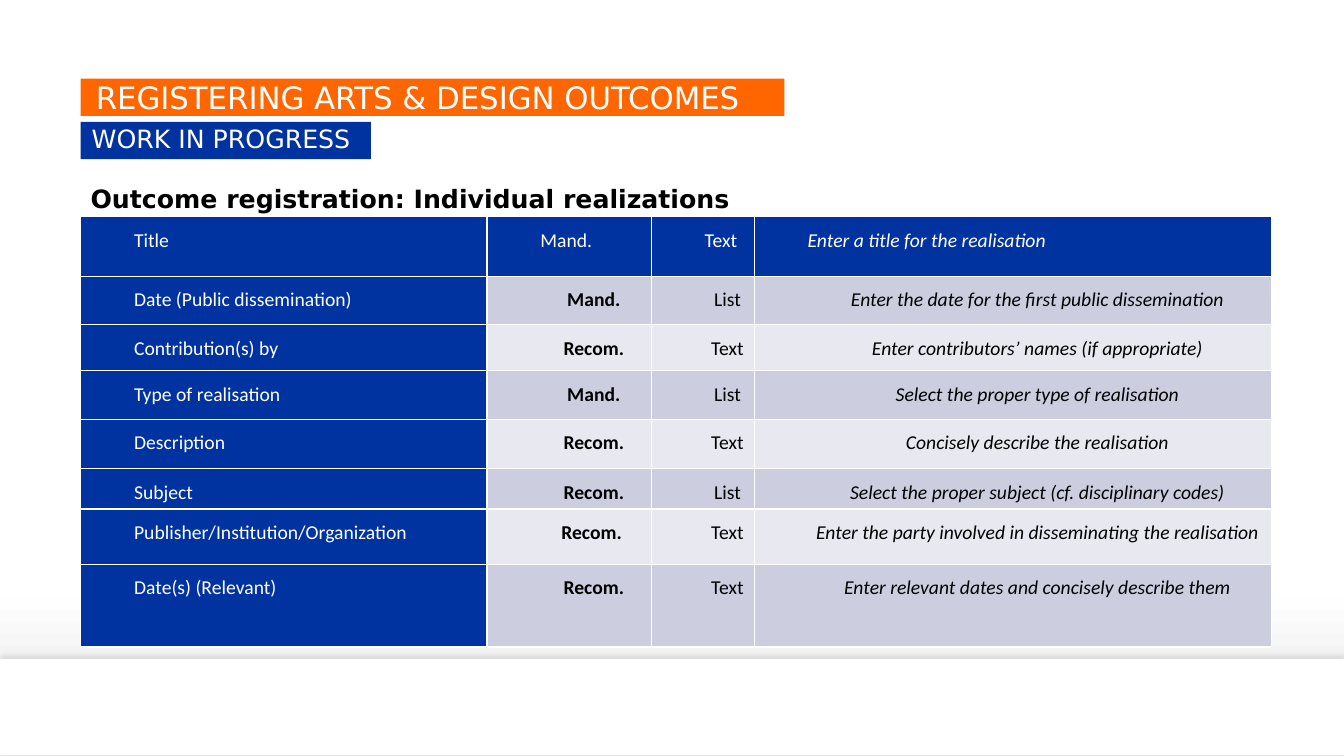
from copy import deepcopy

from lxml import etree
from pptx import Presentation
from pptx import util as u
from pptx.dml.color import RGBColor
from pptx.enum import shapes, text
from pptx.oxml.ns import nsdecls, qn

WHITE = RGBColor(0xFF, 0xFF, 0xFF)
BLACK = RGBColor(0, 0, 0)
ORANGE = RGBColor(0xFF, 0x66, 0x00)
BLUE = RGBColor(0x00, 0x33, 0x9F)
BANDS = [RGBColor(0xE7, 0xE8, 0xF0), RGBColor(0xCC, 0xCE, 0xDF)]
BACKGROUND = [(0, WHITE), (0.79, RGBColor(0xFE, 0xFE, 0xFE)),
              (0.92, RGBColor(0xED, 0xED, 0xED))]

TITLE = "REGISTERING ARTS & DESIGN OUTCOMES"
SUBTITLE = "WORK IN PROGRESS"
HEADING = "Outcome registration: Individual realizations"
FIELDS = [
    ("Title", "Mand.", "Text", "Enter a title for the realisation"),
    ("Date (Public dissemination)", "Mand.", "List",
     "Enter the date for the first public dissemination"),
    ("Contribution(s) by", "Recom.", "Text", "Enter contributors’ names (if appropriate)"),
    ("Type of realisation", "Mand.", "List", "Select the proper type of realisation"),
    ("Description", "Recom.", "Text", "Concisely describe the realisation"),
    ("Subject", "Recom.", "List", "Select the proper subject (cf. disciplinary codes)"),
    ("Publisher/Institution/Organization", "Recom. ", "Text",
     "Enter the party involved in disseminating the realisation"),
    ("Date(s) (Relevant)", "Recom.", "Text",
     "Enter relevant dates and concisely describe them"),
]
COLUMN_WIDTHS = [4.03, 1.63, 1.02, 5.13]
ROW_HEIGHTS = [0.59, 0.48, 0.46, 0.48, 0.49, 0.4, 0.55, 0.82]
LEFT = 0.8

SHADOW = (f'<a:effectLst {nsdecls("a")}><a:outerShdw blurRad="50800" dist="38100" '
          'dir="16200000" algn="b" rotWithShape="0"><a:srgbClr val="000000">'
          '<a:alpha val="10000"/></a:srgbClr></a:outerShdw></a:effectLst>')


def write(frame, words, size, color, font="DejaVu Sans", bold=False, italic=False,
          align=text.PP_ALIGN.LEFT, margin=0, indent=0, spacing=1.0, after=0):
    para = frame.paragraphs[0]
    para.alignment = align
    para.line_spacing = spacing
    para.space_before, para.space_after = u.Pt(0), u.Pt(after)
    props = para._p.get_or_add_pPr()
    props.set("marL", str(u.Inches(margin)))
    props.set("indent", str(u.Inches(indent)))
    span = para.add_run()
    span.text = words
    span.font.name, span.font.size = font, u.Pt(size)
    span.font.bold, span.font.italic = bold, italic
    span.font.color.rgb = color


def set_insets(target, left, top, right, bottom):
    target.margin_left, target.margin_top = u.Inches(left), u.Inches(top)
    target.margin_right, target.margin_bottom = u.Inches(right), u.Inches(bottom)


def place(box, left, top, width, height):
    box.left, box.top = u.Inches(left), u.Inches(top)
    box.width, box.height = u.Inches(width), u.Inches(height)


def paint_background(page):
    fill = page.background.fill
    fill.gradient()
    fill.gradient_angle = 270
    stops = page._element.find(".//" + qn("a:gsLst"))
    while len(stops) < len(BACKGROUND):
        stops.append(deepcopy(stops[-1]))
    for stop, (position, color) in zip(fill.gradient_stops, BACKGROUND):
        stop.position = position
        stop.color.rgb = color


def add_footer_band(page):
    band = page.shapes.add_shape(shapes.MSO_SHAPE.RECTANGLE, 0, u.Inches(6.54),
                                 u.Inches(13.33), u.Inches(0.95))
    band.fill.solid()
    band.fill.fore_color.rgb = WHITE
    band.line.fill.background()
    band._element.spPr.append(etree.fromstring(SHADOW))
    page.shapes._spTree.insert(2, band._element)


def add_banner(box, top, width, color, anchor):
    """Turn a placeholder into a coloured strip and return its text frame."""
    place(box, LEFT, top, width, 0.37)
    box.fill.solid()
    box.fill.fore_color.rgb = color
    frame = box.text_frame
    frame.auto_size = text.MSO_AUTO_SIZE.NONE
    frame.word_wrap = True
    frame.vertical_anchor = anchor
    return frame


def add_field_table(page):
    table = page.shapes.add_table(
        len(FIELDS), len(COLUMN_WIDTHS), u.Inches(LEFT), u.Inches(2.15),
        u.Inches(sum(COLUMN_WIDTHS)), u.Inches(sum(ROW_HEIGHTS))).table
    for column, width in zip(table.columns, COLUMN_WIDTHS):
        column.width = u.Inches(width)
    for row, height in zip(table.rows, ROW_HEIGHTS):
        row.height = u.Inches(height)
    for r, field in enumerate(FIELDS):
        for c, words in enumerate(field):
            cell = table.cell(r, c)
            heading = r == 0 or c == 0
            cell.fill.solid()
            cell.fill.fore_color.rgb = BLUE if heading else BANDS[r % 2]
            set_insets(cell, 0.04, 0, 0.04, 0)
            write(cell.text_frame, words, 14, WHITE if heading else BLACK,
                  font="Calibri", bold=c == 1 and not heading, italic=c == 3,
                  align=text.PP_ALIGN.LEFT if heading else text.PP_ALIGN.CENTER,
                  indent=0.49, spacing=1.5, after=8)


def main():
    deck = Presentation()
    deck.slide_width, deck.slide_height = u.Inches(13.33), u.Inches(7.5)
    page = deck.slides.add_slide(deck.slide_layouts[0])
    paint_background(page)
    add_footer_band(page)

    title = add_banner(page.shapes.title, 0.78, 6.98, ORANGE, text.MSO_ANCHOR.BOTTOM)
    set_insets(title, 0, 0.04, 0.16, 0)
    write(title, TITLE, 22, WHITE, margin=0.15, spacing=0.9)

    subtitle = add_banner(page.placeholders[1], 1.21, 2.88, BLUE, text.MSO_ANCHOR.TOP)
    set_insets(subtitle, 0, 0.04, 0.1, 0.04)
    write(subtitle, SUBTITLE, 18, WHITE, margin=0.11, spacing=0.95, after=10)

    add_field_table(page)

    heading = page.shapes.add_textbox(u.Inches(LEFT), u.Inches(1.77),
                                      u.Inches(6.82), u.Inches(0.4)).text_frame
    heading.word_wrap = True
    write(heading, HEADING, 18, BLACK, bold=True)
    deck.save("out.pptx")


if __name__ == "__main__":
    main()
